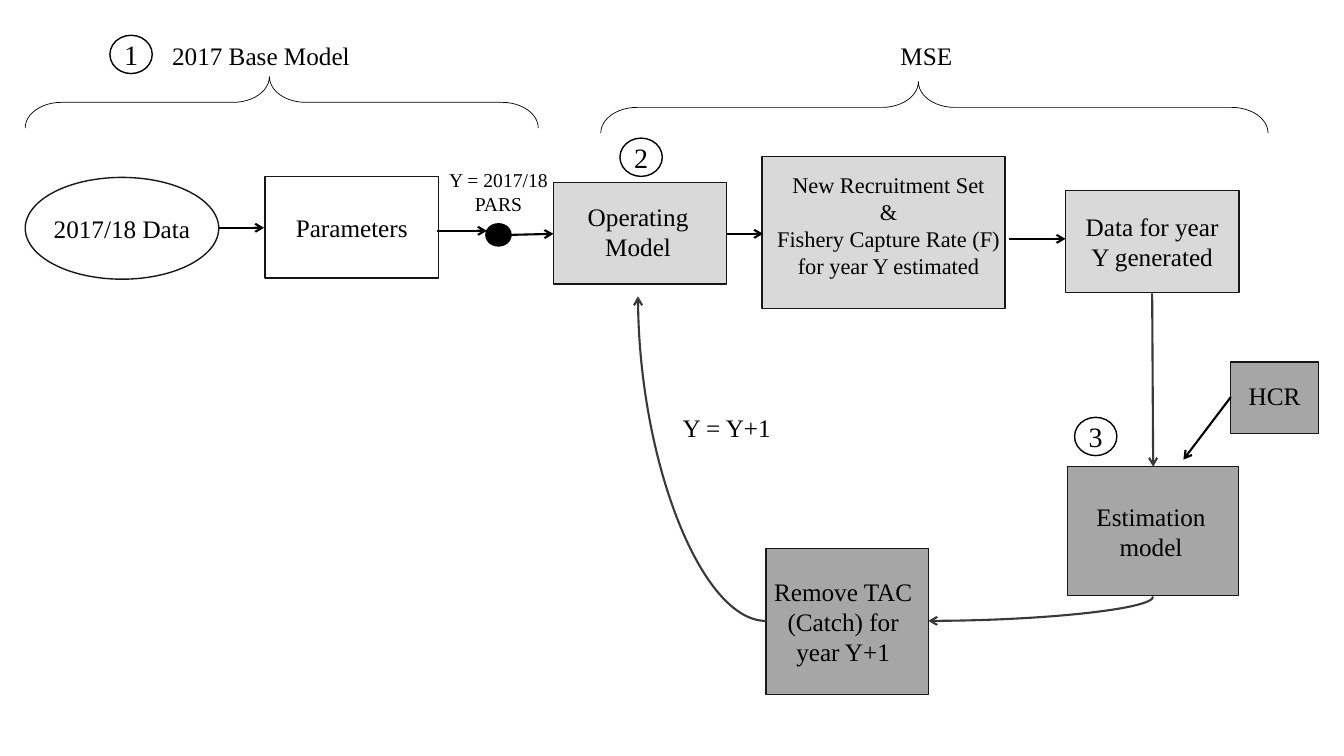
from typing import NamedTuple

from lxml.etree import SubElement
from pptx import Presentation
from pptx.dml.color import RGBColor
from pptx.enum.shapes import MSO_CONNECTOR, MSO_SHAPE
from pptx.enum.text import MSO_ANCHOR, PP_ALIGN
from pptx.oxml.ns import qn
from pptx.util import Inches, Length, Pt

CELL = 0.1  # inches per grid column and row
COLUMNS, ROWS = 133.33, 75
FONT = "Times New Roman"
COLOURS = {
    "white": "FFFFFF",
    "light": "D9D9D9",
    "dark": "A6A6A6",
    "black": "000000",
    "outline": "181717",
    "loop": "3B3838",
}


class Node(NamedTuple):
    column: float
    row: float
    columns: float
    rows: float
    text: str
    fill: str = "white"
    kind: MSO_SHAPE = MSO_SHAPE.RECTANGLE
    size: int = 18
    line: str = "outline"
    margins: tuple[float, float, float, float] = (1, 0, 1, 0)  # left, top, right, bottom


class Label(NamedTuple):
    column: float
    row: float
    columns: float
    rows: float
    text: str
    size: int = 18


class Brace(NamedTuple):
    column: float
    row: float
    columns: float
    rows: float


class Arrow(NamedTuple):
    start: tuple[float, float]
    end: tuple[float, float]
    colour: str = "black"
    curved: bool = False
    arrow_end: str = "a:tailEnd"


NODES = [
    Node(2.5, 17.6, 19.2, 10.1, "2017/18 Data", kind=MSO_SHAPE.OVAL),
    Node(26.3, 17.5, 17.2, 10.1, "Parameters"),
    Node(48.2, 22.2, 2.5, 2.2, "", "black", MSO_SHAPE.OVAL, line="black"),
    Node(54.9, 18.1, 17.2, 10.1, "Operating Model", "light", margins=(1.2, 0, 1.6, 0.4)),
    Node(75.6, 15.5, 24.1, 15.1,
         "New Recruitment Set\n&\nFishery Capture Rate (F)\nfor year Y estimated",
         "light", size=16, margins=(1, 0, 0, 1.4)),
    Node(105.7, 18.9, 17.2, 10.1, "Data for year Y generated", "light",
         margins=(1.5, 0, 1.5, 0)),
    Node(122.1, 35.9, 8.7, 7.1, "HCR", "dark", margins=(0, 0, 0, 0.4)),
    Node(105.9, 46.3, 17, 12.8, "Estimation model", "dark", margins=(1, 0, 1.4, 0)),
    Node(76, 54.4, 16.1, 14.5, "Remove TAC (Catch) for year Y+1", "dark",
         margins=(0.6, 0, 1.4, 0)),
]
STEP_CENTRES = [(13, 5.4), (63.6, 15.6), (108.7, 43.3)]
STEP_COLUMNS, STEP_ROWS = 4.2, 3.8

LABELS = [
    Label(4.1, 3.5, 43.6, 4, "2017 Base Model"),
    Label(87.5, 3.5, 8.8, 4, "MSE"),
    Label(41.7, 16.2, 15.5, 5.7, "Y = 2017/18\nPARS", 14),
    Label(66.1, 40.4, 12, 4, "Y = Y+1"),
]
BRACES = [Brace(2.5, 7.6, 50.9, 5.1), Brace(59.6, 8.1, 66.2, 5.1)]
ARROWS = [
    Arrow((21.7, 22.6), (26.2, 22.6)),
    Arrow((43.4, 22.9), (48.3, 22.9)),
    Arrow((50.7, 23.3), (54.9, 23.2)),
    Arrow((72, 23.2), (75.7, 23.2)),
    Arrow((100.1, 23.7), (105.7, 23.7)),
    Arrow((122.1, 39.4), (117.4, 45.6)),
    Arrow((114.3, 29.1), (114.4, 46.3), "loop"),
    Arrow((92.1, 61.6), (114.4, 59.2), "loop", True, "a:headEnd"),
    Arrow((76, 61.6), (63.3, 29.4), "loop", True),
]


def cells(count: float) -> Length:
    return Inches(count * CELL)


def colour(name: str) -> RGBColor:
    return RGBColor.from_string(COLOURS[name])


def write_text(frame, text: str, size: int) -> None:
    frame.text = text
    for para in frame.paragraphs:
        para.alignment = PP_ALIGN.CENTER
        para.font.name = FONT
        para.font.size = Pt(size)
        para.font.color.rgb = colour("black")


def draw_node(page, node: Node) -> None:
    box = page.shapes.add_shape(node.kind, *map(cells, node[:4]))
    box.shadow.inherit = False
    box.fill.solid()
    box.fill.fore_color.rgb = colour(node.fill)
    box.line.color.rgb = colour(node.line)
    box.line.width = Pt(1)
    if node.text:
        frame = box.text_frame
        frame.word_wrap = node.kind != MSO_SHAPE.OVAL
        frame.vertical_anchor = MSO_ANCHOR.MIDDLE
        (frame.margin_left, frame.margin_top,
         frame.margin_right, frame.margin_bottom) = map(cells, node.margins)
        write_text(frame, node.text, node.size)


def draw_label(page, label: Label) -> None:
    box = page.shapes.add_textbox(*map(cells, label[:4]))
    box.text_frame.word_wrap = True
    write_text(box.text_frame, label.text, label.size)


def draw_brace(page, brace: Brace) -> None:
    """Turn a right brace so that it points up and fills the given area."""
    shift = (brace.columns - brace.rows) / 2
    shape = page.shapes.add_shape(
        MSO_SHAPE.RIGHT_BRACE, cells(brace.column + shift), cells(brace.row - shift),
        cells(brace.rows), cells(brace.columns))
    shape.rotation = 270
    shape.adjustments[0], shape.adjustments[1] = 0.706, 0.476
    shape.shadow.inherit = False
    shape.fill.background()
    shape.line.color.rgb = colour("black")
    shape.line.width = Pt(0.5)


def draw_arrow(page, arrow: Arrow) -> None:
    kind = MSO_CONNECTOR.CURVE if arrow.curved else MSO_CONNECTOR.STRAIGHT
    connector = page.shapes.add_connector(kind, *map(cells, arrow.start + arrow.end))
    connector.line.color.rgb = colour(arrow.colour)
    connector.line.width = Pt(1.5)
    properties = connector._element.spPr
    if arrow.curved:
        properties.find(qn("a:prstGeom")).set("prst", "curvedConnector2")
    SubElement(properties.find(qn("a:ln")), qn(arrow.arrow_end), type="arrow")
    SubElement(properties, qn("a:effectLst"))


def main() -> None:
    deck = Presentation()
    deck.slide_width, deck.slide_height = cells(COLUMNS), cells(ROWS)
    page = deck.slides.add_slide(deck.slide_layouts[6])
    steps = [
        Node(x - STEP_COLUMNS / 2, y - STEP_ROWS / 2, STEP_COLUMNS, STEP_ROWS, str(number),
             kind=MSO_SHAPE.OVAL, size=20, line="black", margins=(0, 0, 0, 0))
        for number, (x, y) in enumerate(STEP_CENTRES, start=1)
    ]
    for node in NODES + steps:
        draw_node(page, node)
    for label in LABELS:
        draw_label(page, label)
    for brace in BRACES:
        draw_brace(page, brace)
    for arrow in ARROWS:
        draw_arrow(page, arrow)
    deck.save("out.pptx")


if __name__ == "__main__":
    main()
